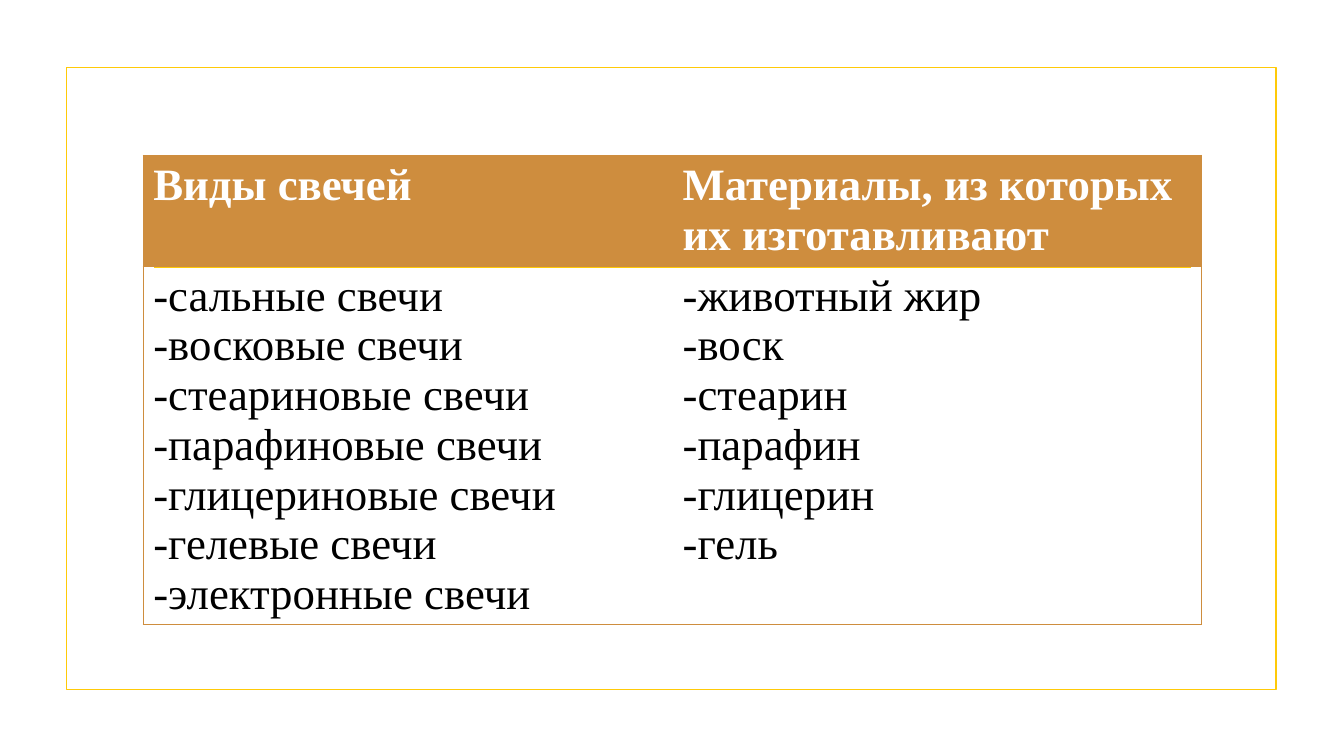
from lxml import etree
from pptx import Presentation
from pptx.dml.color import RGBColor
from pptx.enum import shapes
from pptx.oxml import ns
from pptx.util import Inches, Pt

GOLD = "FFCA08"
OCHRE = "CE8D3E"
COLUMNS = [
    ("Виды свечей",
     ["-сальные свечи", "-восковые свечи", "-стеариновые свечи",
      "-парафиновые свечи", "-глицериновые свечи", "-гелевые свечи",
      "-электронные свечи"]),
    ("Материалы, из которых их изготавливают",
     ["-животный жир", "-воск", "-стеарин", "-парафин", "-глицерин", "-гель"]),
]


def color(value):
    return RGBColor.from_string(value)


def style_line(sp):
    sp.line.color.rgb = color(GOLD)
    sp.line.width = Pt(1.25)


def add_frame(s):
    sp = s.shapes.add_shape(shapes.MSO_SHAPE.RECTANGLE, Inches(0.66), Inches(0.67),
                            Inches(12), Inches(6.17))
    sp.shadow.inherit = False
    sp.fill.background()
    style_line(sp)


def add_rule(s):
    sp = s.shapes.add_connector(shapes.MSO_CONNECTOR.STRAIGHT, Inches(1.53), Inches(2.65),
                                Inches(11.81), Inches(2.65))
    style_line(sp)
    etree.SubElement(sp._element.spPr, ns.qn("a:effectLst"))


def write(tf, lines, size=32, font="Times New Roman", fill="000000", bold=False):
    for i, line in enumerate(lines):
        p = tf.paragraphs[0] if i == 0 else tf.add_paragraph()
        r = p.add_run()
        r.text = line
        r.font.size = Pt(size)
        r.font.name = font
        r.font.bold = bold
        r.font.color.rgb = color(fill)


def set_borders(cell, visible):
    tc_pr = cell._tc.get_or_add_tcPr()
    for side in "LRTB":
        ln = etree.SubElement(tc_pr, ns.qn(f"a:ln{side}"), w=str(Pt(0.75)))
        if side in visible:
            fill = etree.SubElement(ln, ns.qn("a:solidFill"))
            etree.SubElement(fill, ns.qn("a:srgbClr"), val=OCHRE)
        else:
            etree.SubElement(ln, ns.qn("a:noFill"))


def add_candle_table(s):
    table = s.shapes.add_table(2, 2, Inches(1.42), Inches(1.54),
                               Inches(10.5), Inches(4.65)).table
    table.horz_banding = False
    for row, height in zip(table.rows, (1.1, 3.55)):
        row.height = Inches(height)
    for col, (heading, items) in enumerate(COLUMNS):
        edge = "LR"[col]
        head, body = table.cell(0, col), table.cell(1, col)
        set_borders(head, edge + "T")
        head.fill.solid()
        head.fill.fore_color.rgb = color(OCHRE)
        write(head.text_frame, [heading], fill="FFFFFF", bold=True)
        set_borders(body, edge + "TB")
        body.fill.background()
        write(body.text_frame, items)


def main():
    prs = Presentation()
    prs.slide_width, prs.slide_height = Inches(13.33), Inches(7.5)
    s = prs.slides.add_slide(prs.slide_layouts[6])
    add_frame(s)
    add_rule(s)
    add_candle_table(s)
    prs.save("out.pptx")


if __name__ == "__main__":
    main()
